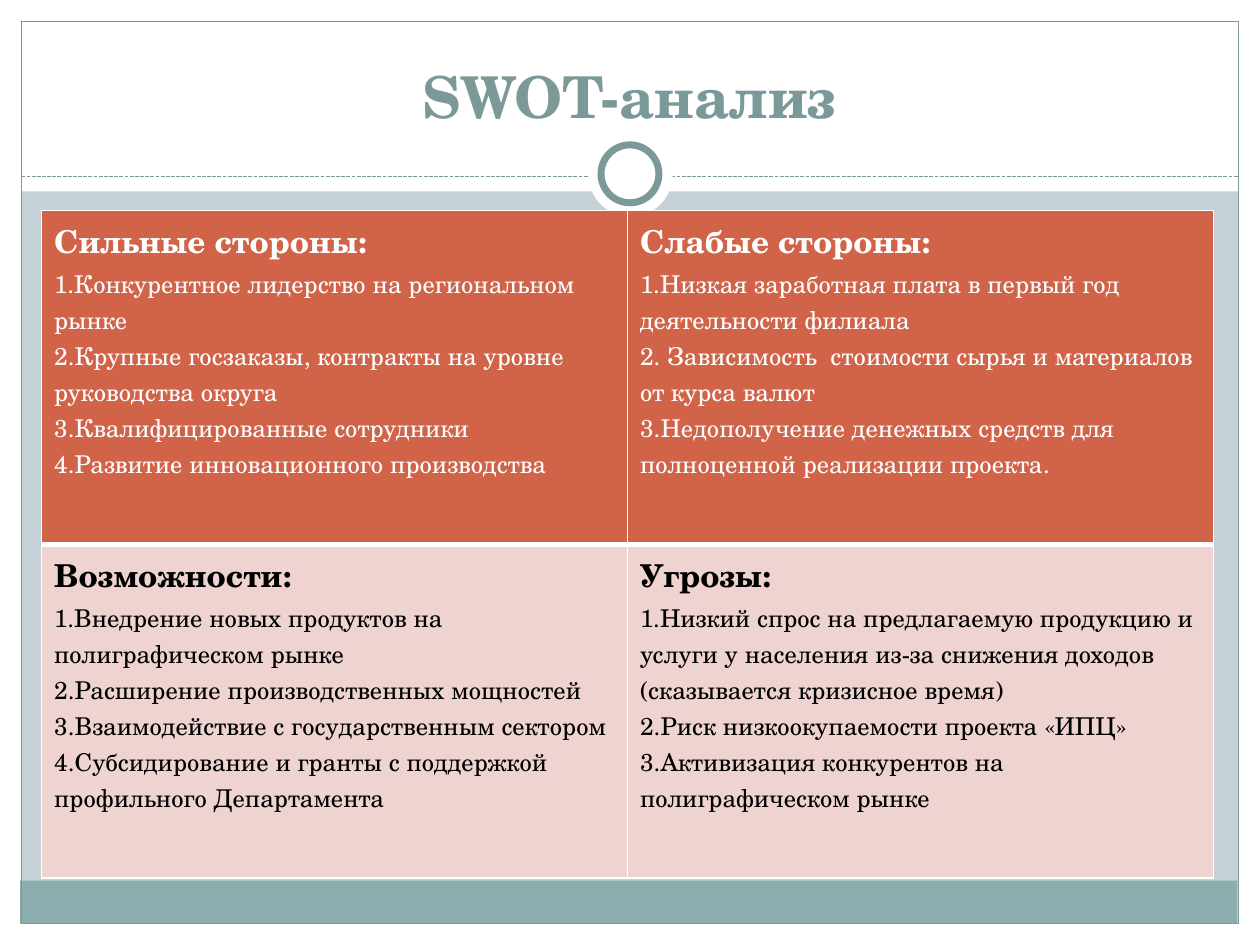
"""Build a SWOT analysis slide with a framed header and a two-by-two table."""
from dataclasses import dataclass

from lxml import etree
from pptx import Presentation
from pptx.dml import color
from pptx.enum import dml, shapes, text
from pptx.oxml import ns
from pptx.util import Inches, Pt

FONT = "TeX Gyre Schola"
WHITE, TEAL, BAND = "FFFFFF", "7C999A", "8CADAE"
RED, PINK, BLACK = "D16349", "EED3D0", "000000"
RECT, OVAL = shapes.MSO_SHAPE.RECTANGLE, shapes.MSO_SHAPE.OVAL


@dataclass
class Panel:
    kind: int
    left: float
    top: float
    width: float
    height: float
    fill: str | None = WHITE
    line_width: float = 0


@dataclass
class Quadrant:
    heading: str
    items: list[str]


PANELS = [
    Panel(RECT, 0, 7.33, 10, 0.17),
    Panel(RECT, 0, 0, 10, 1.52),
    Panel(RECT, 0, 0, 0.17, 7.5),
    Panel(RECT, 9.83, 0, 0.17, 7.5),
    Panel(RECT, 0.16, 6.99, 9.66, 0.34, BAND),
    Panel(RECT, 0.17, 0.17, 9.66, 7.16, None, 0.75),
]
RINGS = [
    Panel(OVAL, 4.67, 1.05, 0.67, 0.67),
    Panel(OVAL, 4.77, 1.15, 0.46, 0.46, WHITE, 4),
]
QUADRANTS = [
    [
        Quadrant("Сильные стороны:", [
            "1.Конкурентное лидерство на региональном рынке",
            "2.Крупные госзаказы, контракты на уровне руководства округа",
            "3.Квалифицированные сотрудники",
            "4.Развитие инновационного производства",
        ]),
        Quadrant("Слабые стороны:", [
            "1.Низкая заработная плата в первый год деятельности филиала",
            "2. Зависимость  стоимости сырья и материалов от курса валют",
            "3.Недополучение денежных средств для полноценной реализации проекта.",
        ]),
    ],
    [
        Quadrant("Возможности:", [
            "1.Внедрение новых продуктов на полиграфическом рынке",
            "2.Расширение производственных мощностей",
            "3.Взаимодействие с государственным сектором",
            "4.Субсидирование и гранты с поддержкой профильного Департамента",
        ]),
        Quadrant("Угрозы:", [
            "1.Низкий спрос на предлагаемую продукцию и услуги у населения "
            "из-за снижения доходов (сказывается кризисное время)",
            "2.Риск низкоокупаемости проекта «ИПЦ»",
            "3.Активизация конкурентов на полиграфическом рынке",
        ]),
    ],
]


def rgb(value: str) -> color.RGBColor:
    return color.RGBColor.from_string(value)


def set_fill(fill, value: str) -> None:
    fill.solid()
    fill.fore_color.rgb = rgb(value)


def set_font(p, size: float, value: str, bold: bool) -> None:
    p.font.name = FONT
    p.font.size = Pt(size)
    p.font.bold = bold
    p.font.color.rgb = rgb(value)


def add_panel(s, panel: Panel) -> None:
    box = map(Inches, (panel.left, panel.top, panel.width, panel.height))
    sp = s.shapes.add_shape(panel.kind, *box)
    sp.shadow.inherit = False
    if panel.fill:
        set_fill(sp.fill, panel.fill)
    else:
        sp.fill.background()
    if panel.line_width:
        sp.line.color.rgb = rgb(TEAL)
        sp.line.width = Pt(panel.line_width)
    else:
        sp.line.fill.background()


def add_divider(s) -> None:
    line = s.shapes.add_connector(
        shapes.MSO_CONNECTOR.STRAIGHT, Inches(0.17), Inches(1.4), Inches(9.83), Inches(1.4))
    line.line.color.rgb = rgb(TEAL)
    line.line.width = Pt(0.75)
    line.line.dash_style = dml.MSO_LINE.SQUARE_DOT
    etree.SubElement(line._element.spPr, ns.qn("a:effectLst"))


def place_title(s) -> None:
    sp = s.shapes.title
    sp.left, sp.top, sp.width, sp.height = map(Inches, (0.33, 0.25, 9.33, 0.83))
    tf = sp.text_frame
    tf.text = "SWOT-анализ"
    tf.vertical_anchor = text.MSO_ANCHOR.BOTTOM
    p = tf.paragraphs[0]
    p.alignment = text.PP_ALIGN.CENTER
    set_font(p, 33, TEAL, True)
    s.shapes._spTree.append(sp._element)


def set_borders(cell, widths: dict[str, float]) -> None:
    properties = cell._tc.get_or_add_tcPr()
    for side, width in widths.items():
        ln = etree.SubElement(properties, ns.qn(f"a:ln{side}"), w=str(Pt(width)))
        fill = etree.SubElement(ln, ns.qn("a:solidFill"))
        etree.SubElement(fill, ns.qn("a:srgbClr"), val=WHITE)


def fill_cell(cell, quadrant: Quadrant, fill: str, ink: str) -> None:
    set_fill(cell.fill, fill)
    tf = cell.text_frame
    tf.text = "\n".join([quadrant.heading, *quadrant.items])
    for i, p in enumerate(tf.paragraphs):
        set_font(p, 14 if i else 18, ink, i == 0)


def add_swot_table(s) -> None:
    frame = s.shapes.add_table(2, 2, Inches(0.33), Inches(1.67), Inches(9.3), Inches(5.3))
    styles = [(RED, WHITE, 1, 3), (PINK, BLACK, 3, 1)]
    for r, (fill, ink, top, bottom) in enumerate(styles):
        for c, quadrant in enumerate(QUADRANTS[r]):
            cell = frame.table.cell(r, c)
            set_borders(cell, {"L": 1, "R": 1, "T": top, "B": bottom})
            fill_cell(cell, quadrant, fill, ink)


def main() -> None:
    prs = Presentation()
    prs.slide_width, prs.slide_height = Inches(10), Inches(7.5)
    s = prs.slides.add_slide(prs.slide_layouts[5])
    set_fill(s.background.fill, "C5D1D7")
    for panel in PANELS:
        add_panel(s, panel)
    add_divider(s)
    for ring in RINGS:
        add_panel(s, ring)
    place_title(s)
    add_swot_table(s)
    prs.save("out.pptx")


if __name__ == "__main__":
    main()
